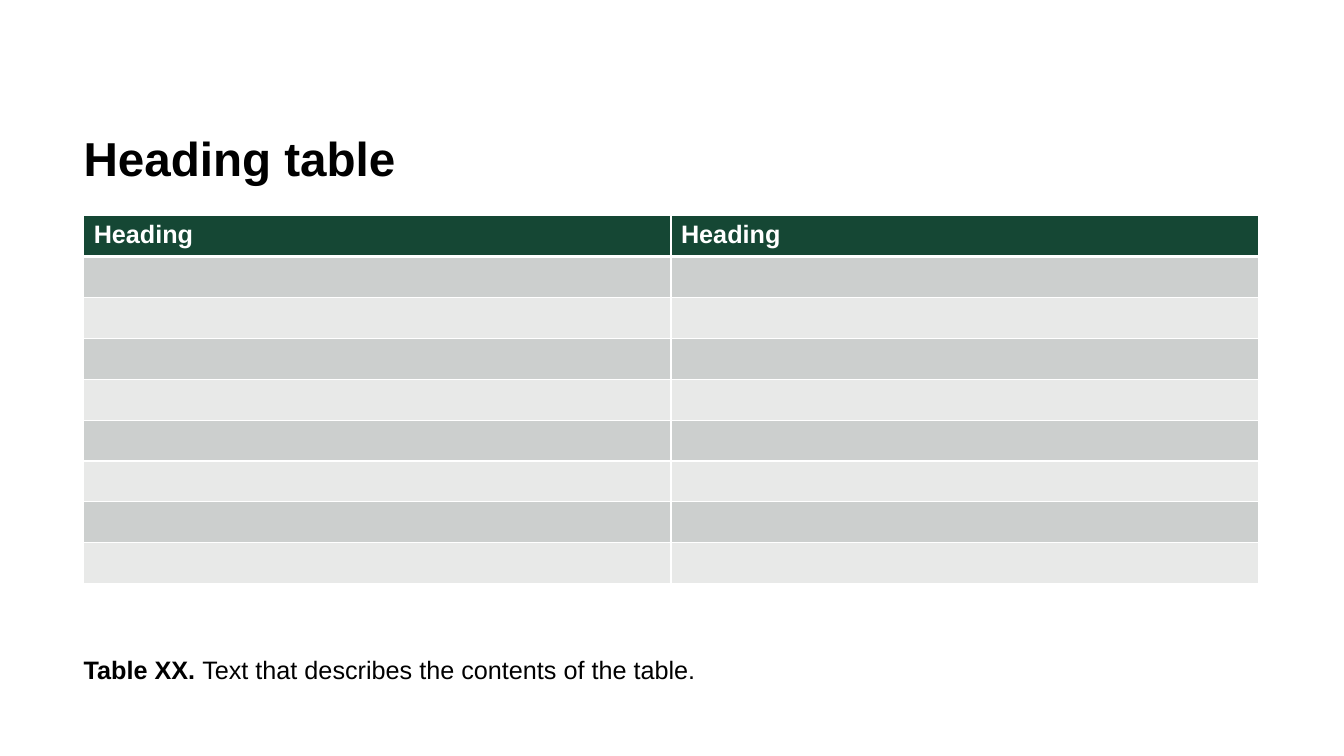
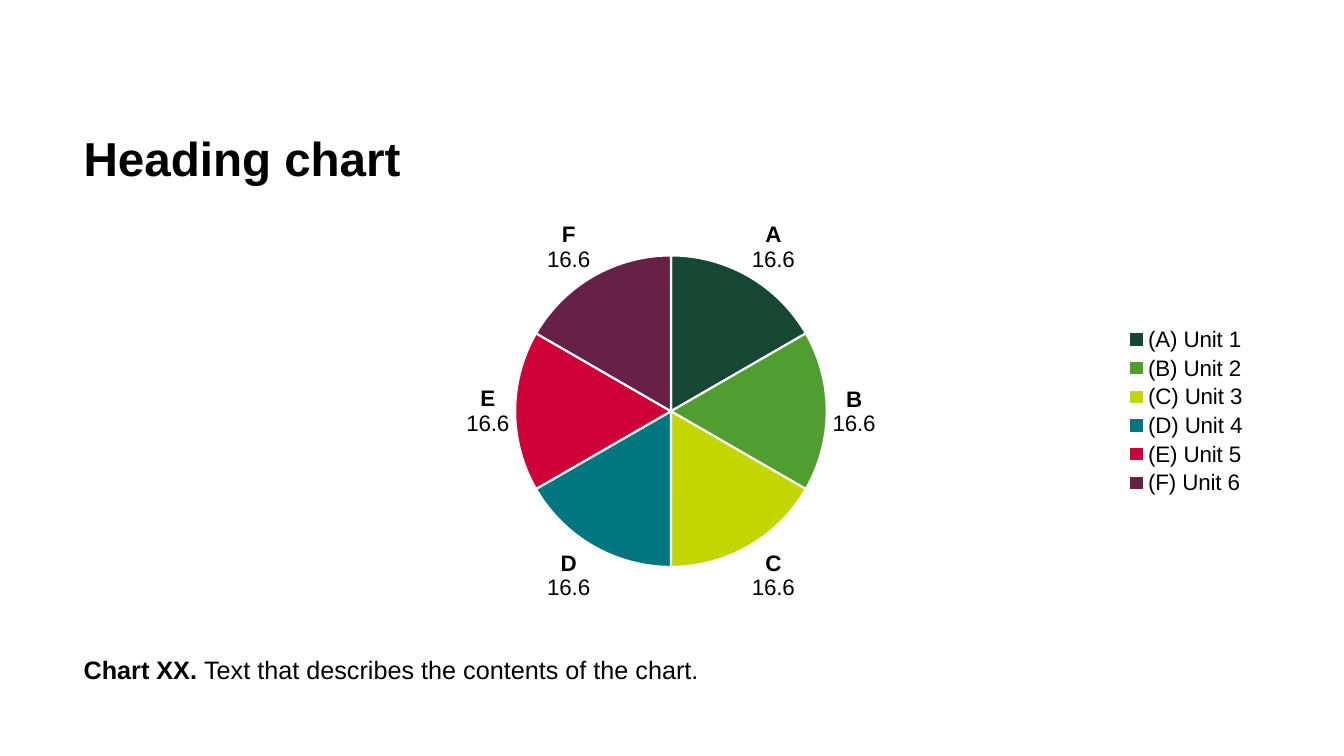
"""Build a table slide and a pie chart slide that share heading and caption styles."""
from lxml.etree import SubElement
from pptx import Presentation
from pptx.chart.data import CategoryChartData
from pptx.dml.color import RGBColor
from pptx.enum.chart import XL_CHART_TYPE, XL_LABEL_POSITION, XL_LEGEND_POSITION
from pptx.enum.text import MSO_ANCHOR
from pptx.oxml import parse_xml
from pptx.oxml.ns import nsdecls, qn
from pptx.util import Inches, Pt

BLACK = RGBColor(0x00, 0x00, 0x00)
WHITE = RGBColor(0xFF, 0xFF, 0xFF)
GREEN = RGBColor(0x15, 0x47, 0x34)
BANDS = [RGBColor(0xE8, 0xE9, 0xE8), RGBColor(0xCC, 0xCF, 0xCE)]
SLICES = [GREEN, RGBColor(0x50, 0x9E, 0x2F), RGBColor(0xC4, 0xD6, 0x00),
          RGBColor(0x00, 0x76, 0x81), RGBColor(0xCE, 0x00, 0x37), RGBColor(0x67, 0x21, 0x46)]
FONT = "Arial"
ROWS, COLS = 9, 2
LETTERS = "ABCDEF"
VALUE = 16.6

prs = Presentation()
prs.slide_width, prs.slide_height = Inches(13.33), Inches(7.5)
LEFT, TOP, WIDTH = Inches(0.83), Inches(2.14), Inches(11.65)
CHART_HEIGHT, PIE_SIZE = Inches(3.88), Inches(3.09)


def add_text(p, text, size=18, bold=False, color=BLACK):
    r = p.add_run()
    r.text = text
    r.font.name, r.font.size, r.font.bold = FONT, Pt(size), bold
    r.font.color.rgb = color


def add_border(cell, side, width):
    cell._tc.get_or_add_tcPr().append(parse_xml(
        f'<a:ln{side} {nsdecls("a")} w="{Pt(width)}"><a:solidFill>'
        f'<a:srgbClr val="{WHITE}"/></a:solidFill></a:ln{side}>'))


slides = {}
for kind in ("table", "chart"):
    s = slides[kind] = prs.slides.add_slide(prs.slide_layouts[6])
    boxes = []
    for top, height in ((1.35, 0.5), (6.33, 0.62)):
        tf = s.shapes.add_textbox(LEFT, Inches(top), WIDTH, Inches(height)).text_frame
        tf.word_wrap = True
        tf.margin_left = tf.margin_right = tf.margin_top = tf.margin_bottom = 0
        boxes.append(tf)
    heading, caption = boxes
    heading.paragraphs[0].line_spacing = Pt(36)
    add_text(heading.paragraphs[0], f"Heading {kind}", size=34, bold=True)
    caption.vertical_anchor = MSO_ANCHOR.MIDDLE
    add_text(caption.paragraphs[0], f"{kind.title()} XX. ", bold=True)
    add_text(caption.paragraphs[0], f"Text that describes the contents of the {kind}.")

table = slides["table"].shapes.add_table(ROWS, COLS, LEFT, TOP, WIDTH, Inches(3.65)).table
for row in range(ROWS):
    for col in range(COLS):
        cell = table.cell(row, col)
        for side in "LRTB":
            thick = (row, side) in ((0, "B"), (1, "T"))
            add_border(cell, side, 3 if thick else 1)
        cell.fill.solid()
        cell.fill.fore_color.rgb = BANDS[row % 2] if row else GREEN
        if row == 0:
            add_text(cell.text_frame.paragraphs[0], "Heading", bold=True, color=WHITE)

data = CategoryChartData()
data.categories = [f"({letter}) Unit {n}" for n, letter in enumerate(LETTERS, 1)]
data.add_series("Series 1", [VALUE] * len(LETTERS))
chart = slides["chart"].shapes.add_chart(
    XL_CHART_TYPE.PIE, LEFT, TOP, WIDTH, CHART_HEIGHT, data).chart
chart.has_title = False
chart.has_legend = True
chart.legend.position = XL_LEGEND_POSITION.RIGHT
chart.legend.include_in_layout = False

plot = chart.plots[0]
plot.vary_by_categories = True
labels = plot.series[0].data_labels
labels.show_value = True
labels.show_percentage = False
labels.position = XL_LABEL_POSITION.OUTSIDE_END
for font in (chart.font, chart.legend.font, labels.font):
    font.name, font.size = FONT, Pt(16)
    font.color.rgb = BLACK
for point_no, (letter, color) in enumerate(zip(LETTERS, SLICES)):
    point = plot.series[0].points[point_no]
    point.format.fill.solid()
    point.format.fill.fore_color.rgb = color
    point.format.line.color.rgb = WHITE
    point.format.line.width = Pt(1.5)
    tf = point.data_label.text_frame
    add_text(tf.paragraphs[0], letter, size=16, bold=True)
    add_text(tf.add_paragraph(), str(VALUE), size=16)
    point.data_label.position = XL_LABEL_POSITION.OUTSIDE_END

area = chart._chartSpace.chart.plotArea
for old in area.findall(qn("c:layout")):
    area.remove(old)
layout = parse_xml(f'<c:layout {nsdecls("c")}><c:manualLayout/></c:layout>')
w, h = PIE_SIZE / WIDTH, PIE_SIZE / CHART_HEIGHT
for tag, val in (("layoutTarget", "inner"), ("xMode", "edge"), ("yMode", "edge"),
                 ("x", (1 - w) / 2), ("y", (1 - h) / 2), ("w", w), ("h", h)):
    SubElement(layout[0], qn(f"c:{tag}")).set("val", str(val))
area.insert(0, layout)

prs.save("out.pptx")
